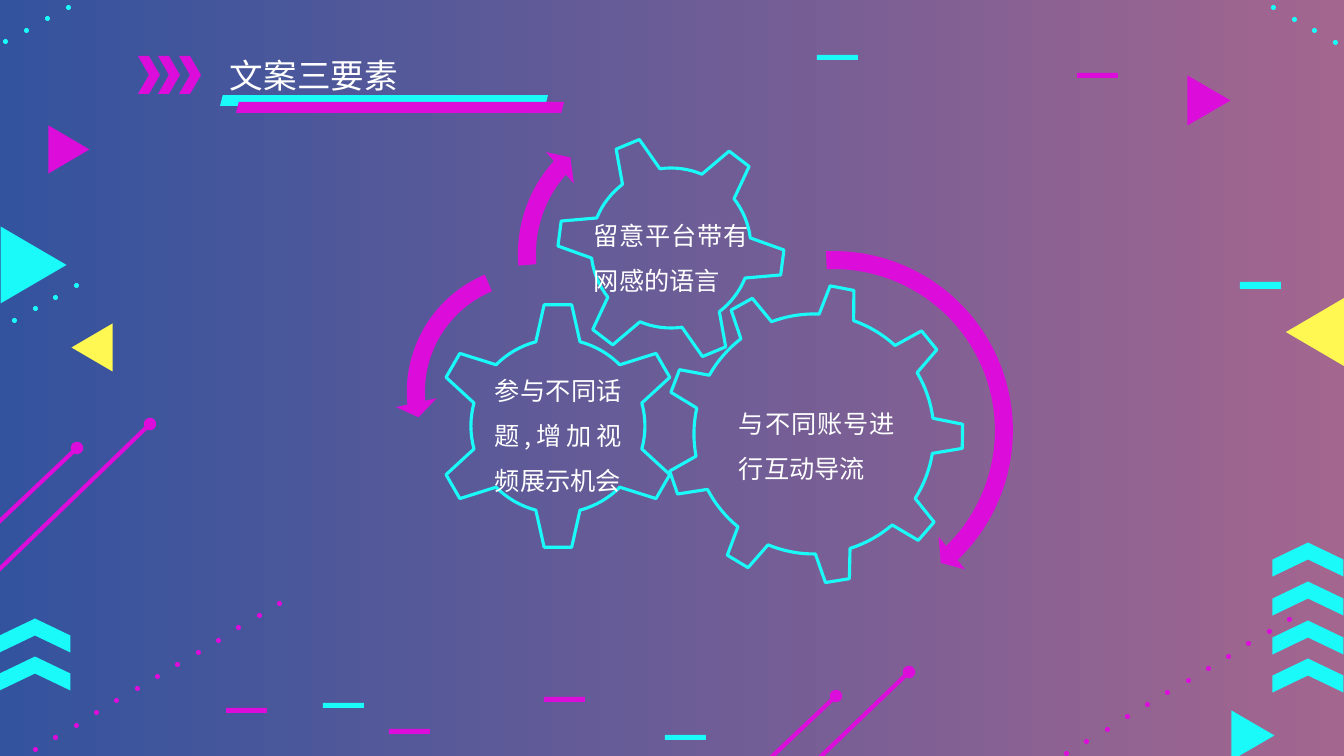
"""Build the slide on the three elements of copywriting, shown as meshing gears."""
from math import cos, radians, sin
from typing import NamedTuple, Union

from lxml import etree
from pptx import Presentation
from pptx.dml.color import RGBColor
from pptx.enum.shapes import MSO_CONNECTOR, MSO_SHAPE
from pptx.enum.text import MSO_AUTO_SIZE, PP_ALIGN
from pptx.oxml.ns import qn
from pptx.shapes.shapetree import GroupShapes, SlideShapes
from pptx.util import Emu, Pt

EMU_PER_PX = 914400 / 100.8
FONT = "Noto Sans CJK SC"
COLORS = {"cyan": "1AFAF9", "magenta": "DC0DDA", "yellow": "FFF852",
          "white": "FFFFFF", "blue": "33539E", "mauve": "A3668F"}
TRIANGLE = MSO_SHAPE.ISOSCELES_TRIANGLE
CHEVRON = MSO_SHAPE.CHEVRON
ELLIPSE = MSO_SHAPE.OVAL
BAR = MSO_SHAPE.RECTANGLE
SLANTED_BAR = MSO_SHAPE.PARALLELOGRAM
CLOCKWISE = MSO_SHAPE.CIRCULAR_ARROW
COUNTERCLOCKWISE = MSO_SHAPE.LEFT_CIRCULAR_ARROW
STRAIGHT = MSO_CONNECTOR.STRAIGHT
JUSTIFY = PP_ALIGN.JUSTIFY
FIT_TO_TEXT = MSO_AUTO_SIZE.SHAPE_TO_FIT_TEXT
DOT_SIZE = 5
ARC_STEPS = 8

Shapes = Union[SlideShapes, GroupShapes]


class Part(NamedTuple):
    kind: MSO_SHAPE
    x: int
    y: int
    w: int
    h: int
    color: str
    turn: float = 0
    adjust: tuple[float, ...] = ()


class DotTrail(NamedTuple):
    first: tuple[int, int]
    last: tuple[int, int]
    count: int
    color: str


class Gear(NamedTuple):
    x: int
    y: int
    root: int
    tip: int
    teeth: int
    phase: float
    root_half: float
    tip_half: float


class Caption(NamedTuple):
    text: str
    x: int
    y: int
    w: int
    h: int


TRIANGLES = [
    Part(TRIANGLE, -5, 232, 77, 66, "cyan", 90),
    Part(TRIANGLE, 1281, 303, 68, 58, "yellow", 270),
    Part(TRIANGLE, 1228, 714, 50, 43, "cyan", 90),
    Part(TRIANGLE, 45, 129, 48, 41, "magenta", 90),
    Part(TRIANGLE, 1184, 79, 50, 43, "magenta", 90),
    Part(TRIANGLE, 68, 327, 48, 41, "yellow", 270),
]
DOT_TRAILS = [
    DotTrail((12, 318), (74, 283), 4, "cyan"),
    DotTrail((3, 39), (66, 5), 4, "cyan"),
    DotTrail((1064, 751), (1287, 617), 12, "magenta"),
    DotTrail((1333, 40), (1271, 5), 4, "cyan"),
    DotTrail((33, 747), (277, 601), 13, "magenta"),
]
SIDE_CHEVRONS = [Part(CHEVRON, x, y, 34, 71, "cyan", 270)
                 for x, tops in ((18, (638, 600)), (1291, (640, 602, 563, 524)))
                 for y in tops]
TITLE_CHEVRONS = [Part(CHEVRON, x, 56, 22, 38, "magenta") for x in (138, 158, 179)]
STREAKS = [(-16, 536, 77, 448), (-18, 586, 150, 424),
           (743, 784, 836, 696), (741, 833, 909, 672)]
DASHES = [Part(BAR, x, y, 41, h, color) for x, y, h, color in (
    (1077, 73, 5, "magenta"), (1240, 282, 7, "cyan"), (544, 697, 5, "magenta"),
    (389, 729, 5, "magenta"), (226, 708, 5, "magenta"), (817, 55, 5, "cyan"),
    (665, 735, 5, "cyan"), (323, 703, 5, "cyan"))]
TITLE_BARS = [Part(SLANTED_BAR, 220, 95, 328, 11, "cyan"),
              Part(SLANTED_BAR, 236, 102, 328, 11, "magenta")]
GEARS = [
    Gear(814, 434, 120, 149, 9, 10.9, 8.4, 4.66),
    Gear(558, 426, 87, 122, 6, 0, 14.7, 6.5),
    Gear(671, 248, 80, 113, 6, 37.4, 14.65, 6.4),
]
TURN_ARROWS = [
    Part(CLOCKWISE, 642, 239, 383, 383, "magenta", 3.8, (0.047, 2.99, 25.315, 158.286, 0.055)),
    Part(COUNTERCLOCKWISE, 395, 253, 278, 278, "magenta", 0,
         (0.065, 4.3, 104.891, 148.378, 0.075)),
    Part(CLOCKWISE, 506, 104, 300, 300, "magenta", 0, (0.06, 3.941, 133.138, 105.082, 0.07)),
]
TITLE = Caption("文案三要素", 220, 50, 325, 50)
GEAR_CAPTIONS = [
    Caption("参与不同话题,增加视频展示机会", 485, 355, 147, 142),
    Caption("与不同账号进行互动导流", 729, 388, 176, 97),
    Caption("留意平台带有网感的语言", 584, 200, 175, 97),
]


def px(length: float) -> Emu:
    return Emu(round(length * EMU_PER_PX))


def rgb(color: str) -> RGBColor:
    return RGBColor.from_string(COLORS[color])


def add_part(shapes: Shapes, part: Part) -> None:
    shape = shapes.add_shape(part.kind, px(part.x), px(part.y), px(part.w), px(part.h))
    shape.shadow.inherit = False
    shape.fill.solid()
    shape.fill.fore_color.rgb = rgb(part.color)
    shape.line.fill.background()
    shape.rotation = part.turn
    for index, value in enumerate(part.adjust):
        shape.adjustments[index] = value


def add_parts(shapes: Shapes, parts: list[Part]) -> None:
    for part in parts:
        add_part(shapes, part)


def add_dot_trail(shapes: SlideShapes, trail: DotTrail) -> None:
    (x0, y0), (x1, y1) = trail.first, trail.last
    steps = trail.count - 1
    dots = [Part(ELLIPSE, round(x0 + (x1 - x0) * i / steps), round(y0 + (y1 - y0) * i / steps),
                 DOT_SIZE, DOT_SIZE, trail.color) for i in range(trail.count)]
    add_parts(shapes.add_group_shape().shapes, dots)


def add_streak(shapes: SlideShapes, ends: tuple[int, int, int, int]) -> None:
    streak = shapes.add_connector(STRAIGHT, *map(px, ends))
    streak.line.color.rgb = rgb("magenta")
    streak.line.width = Pt(3)
    outline = streak.line._get_or_add_ln()
    for end in ("a:headEnd", "a:tailEnd"):
        etree.SubElement(outline, qn(end), type="oval")
    etree.SubElement(streak._element.spPr, qn("a:effectLst"))


def add_gear(shapes: SlideShapes, gear: Gear) -> None:
    def point(radius: int, angle: float) -> tuple[int, int]:
        turn = radians(angle)
        return px(gear.x + radius * sin(turn)), px(gear.y - radius * cos(turn))

    pitch = 360 / gear.teeth
    valley = pitch - 2 * gear.root_half
    points = []
    for tooth in range(gear.teeth):
        middle = gear.phase + tooth * pitch
        points += [point(gear.tip, middle - gear.tip_half), point(gear.tip, middle + gear.tip_half)]
        points += [point(gear.root, middle + gear.root_half + valley * step / ARC_STEPS)
                   for step in range(ARC_STEPS + 1)]
    builder = shapes.build_freeform(*points[0])
    builder.add_line_segments(points[1:], close=True)
    outline = builder.convert_to_shape()
    outline.shadow.inherit = False
    outline.fill.background()
    outline.line.color.rgb = rgb("cyan")
    outline.line.width = Pt(2.25)


def add_text(shapes: SlideShapes, caption: Caption, *, size: int, spacing: float = 1.0) -> None:
    box = shapes.add_textbox(px(caption.x), px(caption.y), px(caption.w), px(caption.h))
    frame = box.text_frame
    frame.word_wrap = True
    frame.auto_size = FIT_TO_TEXT
    paragraph = frame.paragraphs[0]
    paragraph.alignment = JUSTIFY
    paragraph.line_spacing = spacing
    run = paragraph.add_run()
    run.text = caption.text
    run.font.size = Pt(size)
    run.font.name = FONT
    run.font.color.rgb = rgb("white")
    etree.SubElement(run.font._element, qn("a:ea"), typeface=FONT)


def main() -> None:
    deck = Presentation()
    deck.slide_width, deck.slide_height = px(1344), px(756)
    slide = deck.slides.add_slide(deck.slide_layouts[6])
    backdrop = slide.background.fill
    backdrop.gradient()
    backdrop.gradient_angle = 0
    for stop, position, color in zip(backdrop.gradient_stops, (0, 1), ("blue", "mauve")):
        stop.position = position
        stop.color.rgb = rgb(color)

    shapes = slide.shapes
    add_parts(shapes, TRIANGLES)
    for trail in DOT_TRAILS:
        add_dot_trail(shapes, trail)
    for streak in STREAKS:
        add_streak(shapes, streak)
    add_parts(shapes, SIDE_CHEVRONS + DASHES)
    add_text(shapes, TITLE, size=24)
    add_parts(shapes.add_group_shape().shapes, TITLE_CHEVRONS)
    add_parts(shapes, TITLE_BARS)
    for gear in GEARS:
        add_gear(shapes, gear)
    add_parts(shapes, TURN_ARROWS)
    for caption in GEAR_CAPTIONS:
        add_text(shapes, caption, size=18, spacing=1.5)
    deck.save("out.pptx")


if __name__ == "__main__":
    main()
